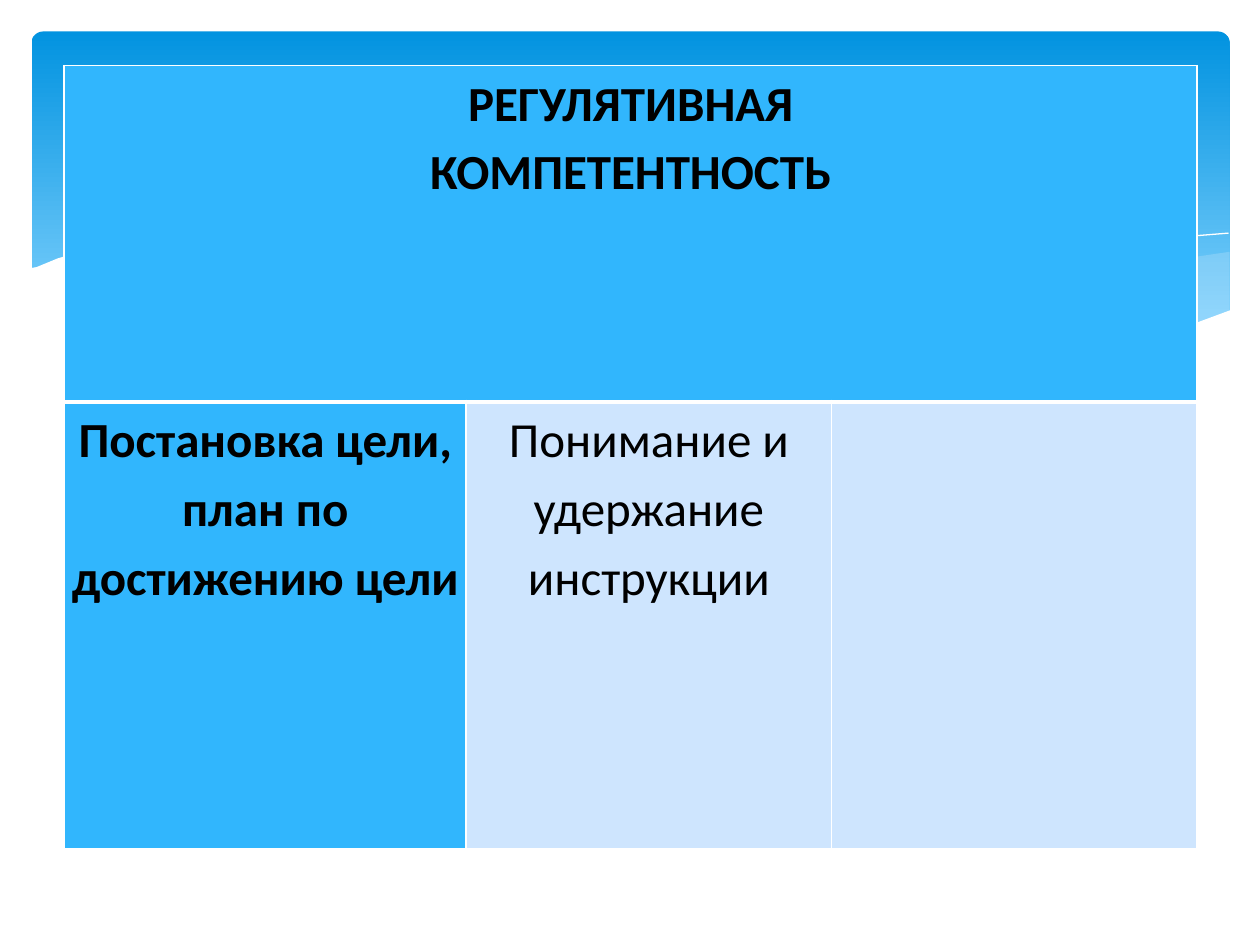
from lxml import etree
from pptx import Presentation
from pptx.dml.color import RGBColor
from pptx.enum.shapes import MSO_SHAPE
from pptx.enum.text import PP_ALIGN
from pptx.oxml.ns import qn
from pptx.util import Emu, Pt

ROUND_RECT = MSO_SHAPE.ROUNDED_RECTANGLE
CENTER = PP_ALIGN.CENTER
PX = 9144  # 100 px to the inch
FONT = "Calibri"
COLORS = {
    "white": "FFFFFF", "text": "000000", "sky_top": "0293E0",
    "sky_bottom": "83D3FE", "mist": "C6E7FC", "head": "31B6FD",
    "cell": "CEE5FE",
}

# Wave outlines in px, relative to the left top corner of the banner
MIST_RIGHT = [(950, 175), (923, 179), (896, 185), (836, 198), (780, 212),
              (728, 223), (681, 232), (636, 240), (680, 246), (720, 250),
              (767, 252), (810, 252), (856, 249), (896, 242), (924, 234),
              (951, 222), (951, 175)]
MIST_LEFT = [(868, 248), (812, 240), (750, 229), (681, 215), (604, 197),
             (544, 183), (489, 173), (440, 166), (395, 162), (355, 160),
             (319, 161), (288, 163), (261, 166), (317, 174), (379, 186),
             (424, 197), (505, 215), (576, 230), (640, 241), (697, 249),
             (748, 252), (793, 253), (832, 251), (868, 248)]
LINE_FALLING = [(284, 170), (310, 166), (349, 163), (391, 162), (444, 164),
                (508, 169), (583, 179), (640, 188), (702, 201), (770, 216),
                (844, 236), (882, 247)]
LINE_RISING = [(588, 232), (628, 221), (695, 204), (751, 191), (811, 179),
               (870, 169), (913, 163), (950, 160)]
WHITE_WAVE = [(952, 221), (925, 231), (895, 240), (862, 246), (825, 250),
              (784, 252), (736, 250), (683, 245), (623, 237), (554, 225),
              (478, 208), (422, 195), (340, 177), (267, 165), (205, 160),
              (152, 159), (107, 161), (70, 168), (42, 174), (21, 180),
              (4, 187), (-2, 188), (-2, 304), (952, 304), (952, 221)]


def rgb(name):
    return RGBColor.from_string(COLORS[name])


def px(*values):
    return [Emu(v * PX) for v in values]


def add_wave(slide, box, points, fill=None, alpha=100):
    """Draw a filled outline, or an open white hairline if no fill is given."""
    x, y = box[:2]
    pts = [(x + dx, y + dy) for dx, dy in points]
    builder = slide.shapes.build_freeform(*pts[0], scale=PX)
    builder.add_line_segments(pts[1:], close=fill is not None)
    sp = builder.convert_to_shape()
    sp.shadow.inherit = False
    if fill is None:
        sp.fill.background()
        sp.line.color.rgb = rgb("white")
        sp.line.width = Pt(0)
        return
    sp.line.fill.background()
    sp.fill.solid()
    sp.fill.fore_color.rgb = rgb(fill)
    if alpha < 100:
        clr = sp.fill._xPr.find(".//" + qn("a:srgbClr"))
        etree.SubElement(clr, qn("a:alpha"), val=str(alpha * 1000))


def add_banner(slide, box):
    sp = slide.shapes.add_shape(ROUND_RECT, *px(*box))
    sp.adjustments[0] = 0.034
    sp.shadow.inherit = False
    sp.line.fill.background()
    sp.fill.gradient()
    sp.fill.gradient_angle = 270
    stops = zip(sp.fill.gradient_stops, ("sky_top", "sky_bottom"), (0, 0.9))
    for stop, color, position in stops:
        stop.color.rgb = rgb(color)
        stop.position = position
    add_wave(slide, box, MIST_RIGHT, "mist", 29)
    add_wave(slide, box, MIST_LEFT, "mist", 40)
    add_wave(slide, box, LINE_FALLING)
    add_wave(slide, box, LINE_RISING)
    add_wave(slide, box, WHITE_WAVE, "white")


def set_borders(cell, top, bottom):
    """Give the cell white borders; top and bottom are widths in points."""
    tcPr = cell._tc.get_or_add_tcPr()
    widths = {"lnL": 1, "lnR": 1, "lnT": top, "lnB": bottom}
    for i, (tag, width) in enumerate(widths.items()):
        ln = etree.Element(qn("a:" + tag), w=str(Pt(width)))
        fill = etree.SubElement(ln, qn("a:solidFill"))
        etree.SubElement(fill, qn("a:srgbClr"), val=COLORS["white"])
        tcPr.insert(i, ln)


def write_cell(cell, lines, bold):
    cell.margin_left, cell.margin_right = px(5, 5)
    cell.margin_top = cell.margin_bottom = 0
    tf = cell.text_frame
    for i, line in enumerate(lines):
        p = tf.add_paragraph() if i else tf.paragraphs[0]
        p.alignment = CENTER
        p.line_spacing = 1.15
        r = p.add_run()
        r.text = line
        r.font.name = FONT
        r.font.size = Pt(28)
        r.font.bold = bold
        r.font.color.rgb = rgb("text")


def add_competence_table(slide, box):
    col_widths, row_heights = (319, 290, 290), (267, 355)
    table = slide.shapes.add_table(2, 3, *px(*box)).table
    for col, width in zip(table.columns, px(*col_widths)):
        col.width = width
    for row, height in zip(table.rows, px(*row_heights)):
        row.height = height
    for r, row in enumerate(table.rows):
        for c, cell in enumerate(row.cells):
            cell.fill.solid()
            cell.fill.fore_color.rgb = rgb("cell" if r and c else "head")
            set_borders(cell, top=3 if r else 1, bottom=1 if r else 3)
    table.cell(0, 0).merge(table.cell(0, 2))
    write_cell(table.cell(0, 0), ["РЕГУЛЯТИВНАЯ", "КОМПЕТЕНТНОСТЬ"], True)
    write_cell(table.cell(1, 0), ["Постановка цели, план по достижению цели"], True)
    write_cell(table.cell(1, 1), ["Понимание и удержание инструкции"], False)


def main():
    prs = Presentation()
    prs.slide_width, prs.slide_height = px(1000, 750)
    slide = prs.slides.add_slide(prs.slide_layouts[6])
    add_banner(slide, (25, 25, 951, 270))
    add_competence_table(slide, (51, 52, 899, 622))
    prs.save("out.pptx")


if __name__ == "__main__":
    main()
